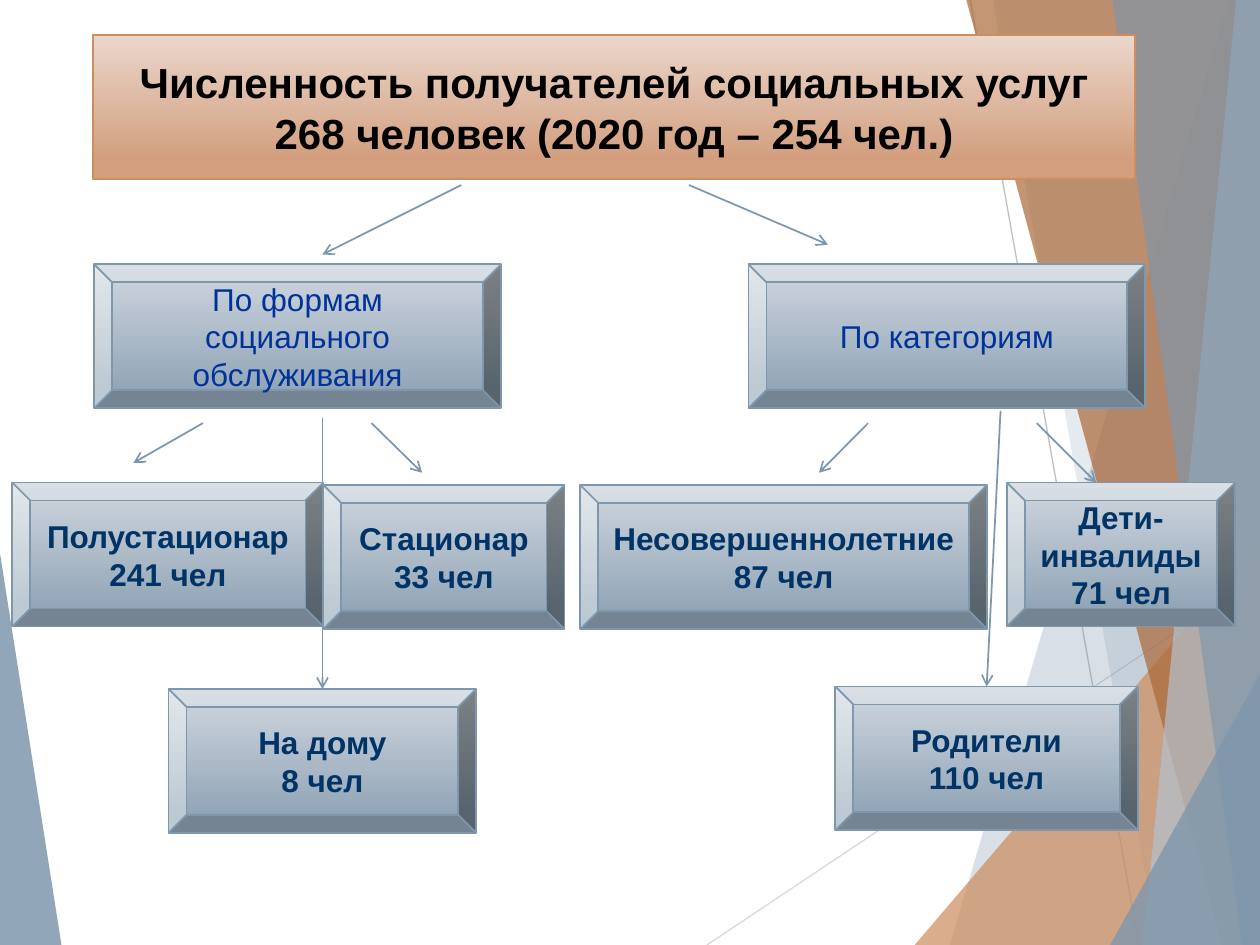
from pptx import Presentation
from pptx.dml.color import RGBColor
from pptx.enum.shapes import MSO_CONNECTOR as Link, MSO_SHAPE as Form
from pptx.enum.text import MSO_ANCHOR as Anchor, MSO_AUTO_SIZE as Fit, PP_ALIGN as Align
from pptx.oxml import parse_xml
from pptx.oxml.ns import nsdecls, qn
from pptx.util import Cm, Pt
from lxml.etree import SubElement

WIDE, HIGH = 25.4, 19.05
BOX_H = 2.9
BLUE, TAN = "7E97AD", "CC8E60"
STEEL, PEACH = ("D0D7DF", "92A5B7"), ("EBD6CB", "D29E7D")


def color(code):
    return RGBColor.from_string(code)


def line(slide, start, end, tint, width=1, arrow=False):
    link = slide.shapes.add_connector(
        Link.STRAIGHT, *(Cm(v) for v in (*start, *end)))
    link.line.color.rgb = color(tint)
    link.line.width = Pt(width)
    if arrow:
        SubElement(link.line._get_or_add_ln(), qn("a:tailEnd"), type="arrow")
    SubElement(link._element.spPr, qn("a:effectLst"))


def area(slide, points, tint, alpha):
    """Draw a see-through polygon; alpha is a percentage."""
    dots = [(Cm(x), Cm(y)) for x, y in points]
    pen = slide.shapes.build_freeform(*dots[0])
    pen.add_line_segments(dots[1:], close=True)
    shape = pen.convert_to_shape()
    shape.shadow.inherit = False
    shape.fill.solid()
    shape.fill.fore_color.rgb = color(tint)
    shape.line.fill.background()
    tone = shape._element.spPr.find(".//" + qn("a:srgbClr"))
    SubElement(tone, qn("a:alpha"), val=str(alpha * 1000))


def strip(slide, top, foot, tint, alpha):
    """Fill from a slanted left edge to the right side of the slide."""
    area(slide, [(top, 0), (foot, HIGH), (WIDE, HIGH), (WIDE, 0)], tint, alpha)


def corner(slide, foot, side, tint, alpha):
    """Fill the triangle in the bottom right corner."""
    area(slide, [(foot, HIGH), (WIDE, side), (WIDE, HIGH)], tint, alpha)


def decor(slide):
    area(slide, [(0, 11.15), (1.24, HIGH), (0, HIGH)], BLUE, 85)
    line(slide, (14.25, HIGH), (WIDE, 11.61), "D9D9D9", 0.75)
    line(slide, (19.56, 0), (22.96, HIGH), "BFBFBF", 0.75)
    strip(slide, 24.77, 19.15, BLUE, 30)
    strip(slide, 20.02, 23.34, BLUE, 20)
    corner(slide, 18.44, 10.9, TAN, 72)
    strip(slide, 19.48, 24.64, "AA6837", 70)
    strip(slide, 24.92, 23.04, "B2C1CE", 70)
    strip(slide, 22.43, 25.04, BLUE, 65)
    corner(slide, 22.38, 13.59, BLUE, 80)


def dress(shape, text, shades, edge, ink, size=18, bold=True):
    """Give a bevel its gradient, outline and centred text."""
    shape.fill.gradient()
    shape.fill.gradient_angle = 270
    for stop, shade, place in zip(shape.fill.gradient_stops, shades, (0, 0.88)):
        stop.color.rgb = color(shade)
        stop.position = place
    shape.line.color.rgb = color(edge)
    shape.line.width = Pt(1)
    frame = shape.text_frame
    frame.text = text
    frame.word_wrap = True
    frame.auto_size = Fit.NONE
    frame.vertical_anchor = Anchor.MIDDLE
    for para in frame.paragraphs:
        para.alignment = Align.CENTER
        para.font.name = "Arial"
        para.font.size = Pt(size)
        para.font.bold = bold
        para.font.color.rgb = color(ink)


def heading(slide, left, top, width):
    title = slide.shapes.title
    title.left, title.top = Cm(left), Cm(top)
    title.width, title.height = Cm(width), Cm(BOX_H)
    title._element.spPr.append(parse_xml(
        f'<a:prstGeom {nsdecls("a")} prst="bevel"><a:avLst/></a:prstGeom>'))
    dress(title, "Численность получателей социальных услуг\n"
          "268 человек (2020 год – 254 чел.)", PEACH, TAN, "000000", 24)
    slide.shapes._spTree.append(title._element)  # in front of the decor
    y = top + 3.02
    line(slide, (left + 12.01, y), (left + 14.81, y + 1.2), BLUE, arrow=True)
    line(slide, (left + 7.42, y), (left + 4.62, y + 1.4), BLUE, arrow=True)


def branch(slide, left, top, head, leaves, arrows):
    """Draw a head box, its leaf boxes and the arrows between them."""
    def box(x, y, width, text, ink, bold):
        shape = slide.shapes.add_shape(
            Form.BEVEL, Cm(left + x), Cm(top + y), Cm(width), Cm(BOX_H))
        shape.shadow.inherit = False
        dress(shape, text, STEEL, BLUE, ink, bold=bold)

    box(*head, "003399", False)
    for leaf in leaves:
        box(*leaf, "003366", True)
    for x1, y1, x2, y2 in arrows:
        line(slide, (left + x1, top + y1), (left + x2, top + y2),
             BLUE, arrow=True)


def main():
    deck = Presentation()
    deck.slide_width, deck.slide_height = Cm(WIDE), Cm(HIGH)
    slide = deck.slides.add_slide(deck.slide_layouts[5])
    decor(slide)
    heading(slide, 1.88, 0.71, 21)
    branch(slide, 0.25, 5.33,
           (1.65, 0, 8.2, "По формам социального обслуживания"),
           [(0, 4.4, 6.27, "Полустационар\n241 чел"),
            (6.27, 4.45, 4.86, "Стационар\n33 чел"),
            (3.15, 8.56, 6.2, "На дому\n8 чел")],
           [(3.84, 3.2, 2.44, 4),
            (7.24, 3.2, 8.26, 4.2),
            (6.25, 3.1, 6.25, 8.56)])
    branch(slide, 11.7, 5.33,
           (3.39, 0, 8, "По категориям"),
           [(8.6, 4.4, 4.6, "Дети-инвалиды\n71 чел"),
            (0, 4.45, 8.2, "Несовершеннолетние\n87 чел"),
            (5.14, 8.51, 6.1, "Родители\n110 чел")],
           [(8.47, 2.95, 8.19, 8.51),
            (5.8, 3.2, 4.81, 4.2),
            (9.2, 3.2, 10.4, 4.4)])
    deck.save("out.pptx")


if __name__ == "__main__":
    main()
